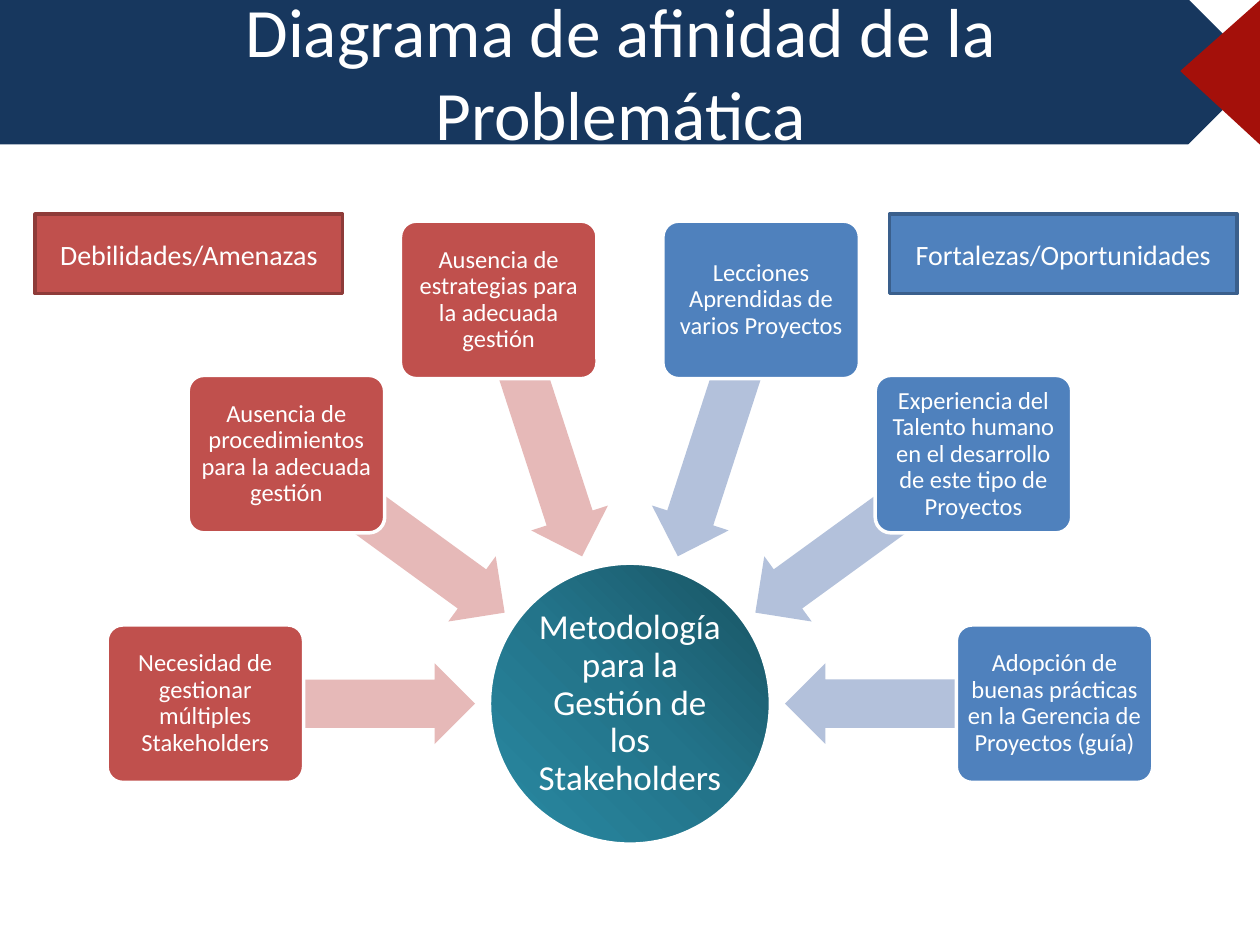
from copy import deepcopy
from math import cos, radians, sin

from pptx import Presentation
from pptx.dml.color import RGBColor
from pptx.enum.shapes import MSO_SHAPE
from pptx.enum.text import MSO_ANCHOR, PP_ALIGN
from pptx.oxml.ns import qn
from pptx.util import Inches, Pt

TOP, MIDDLE = MSO_ANCHOR.TOP, MSO_ANCHOR.MIDDLE
CENTER = PP_ALIGN.CENTER
RECTANGLE, ROUNDED = MSO_SHAPE.RECTANGLE, MSO_SHAPE.ROUNDED_RECTANGLE
PENTAGON, TRIANGLE = MSO_SHAPE.PENTAGON, MSO_SHAPE.ISOSCELES_TRIANGLE
OVAL, LEFT_ARROW = MSO_SHAPE.OVAL, MSO_SHAPE.LEFT_ARROW

COLORS = {
    "white": "FFFFFF", "navy": "17375E", "crimson": "A4100A",
    "red": "C0504D", "red_edge": "8E3B39", "red_arrow": "E6B9B8",
    "blue": "4F81BD", "blue_edge": "3A5F8C", "blue_arrow": "B3C1DB",
    "teal_dark": "185261", "teal": "23748A", "teal_light": "298AA3",
}

HUB = (5, 5.585)
HUB_SIZE = 2.23
ARROW_RADIUS, CARD_RADIUS = 2.3, 3.37
FACTORS = [
    ("red", "Necesidad de gestionar múltiples Stakeholders"),
    ("red", "Ausencia de procedimientos para la adecuada gestión"),
    ("red", "Ausencia de estrategias para la adecuada gestión"),
    ("blue", "Lecciones Aprendidas de varios Proyectos"),
    ("blue", "Experiencia del Talento humano en el desarrollo de este tipo de Proyectos"),
    ("blue", "Adopción de buenas prácticas en la Gerencia de Proyectos (guía)"),
]


def color(name):
    return RGBColor.from_string(COLORS[name])


def write(shape, text, size=14, spacing=1.0, anchor=MIDDLE, inset=(0.1, 0.05)):
    frame = shape.text_frame
    frame.word_wrap = True
    frame.vertical_anchor = anchor
    frame.margin_left = frame.margin_right = Inches(inset[0])
    frame.margin_top = frame.margin_bottom = Inches(inset[1])
    para = frame.paragraphs[0]
    para.alignment = CENTER
    para.line_spacing = spacing
    span = para.add_run()
    span.text = text
    span.font.name = "Calibri"
    span.font.size = Pt(size)
    span.font.color.rgb = color("white")


def around_hub(radius, angle):
    return (HUB[0] + radius * cos(radians(angle)),
            HUB[1] + radius * sin(radians(angle)))


class Diagram:
    def __init__(self, page):
        self.page = page

    def shape(self, kind, left, top, width, height, fill, line=None, weight=2,
              rotation=0, adjustments=()):
        shape = self.page.shapes.add_shape(
            kind, Inches(left), Inches(top), Inches(width), Inches(height))
        shape.shadow.inherit = False
        shape.rotation = rotation
        for index, value in enumerate(adjustments):
            shape.adjustments[index] = value
        shape.fill.solid()
        shape.fill.fore_color.rgb = color(fill)
        if line:
            shape.line.color.rgb = color(line)
            shape.line.width = Pt(weight)
        else:
            shape.line.fill.background()
        return shape

    def centered(self, kind, center, width, height, fill, **style):
        return self.shape(kind, center[0] - width / 2, center[1] - height / 2,
                          width, height, fill, **style)

    def header(self, text):
        self.shape(PENTAGON, 0, 0, 10, 1.14, "navy", line="navy", weight=0.75)
        self.shape(TRIANGLE, 9.12, 0.26, 1.14, 0.63, "crimson", line="crimson",
                   weight=0.75, rotation=270, adjustments=[0.51])
        box = self.page.shapes.add_textbox(
            Inches(1.2), Inches(-0.14), Inches(7.45), Inches(1.26))
        write(box, text, size=39.6, anchor=TOP)

    def hub(self, text):
        circle = self.centered(OVAL, HUB, HUB_SIZE, HUB_SIZE, "teal", line="white")
        circle.fill.gradient()
        circle.fill.gradient_angle = 225
        stop_list = next(circle._element.iter(qn("a:gsLst")))
        stop_list.append(deepcopy(stop_list[-1]))
        names = ("teal_dark", "teal", "teal_light")
        for index, (stop, name) in enumerate(zip(circle.fill.gradient_stops, names)):
            stop.position = index / 2
            stop.color.rgb = color(name)
        write(circle, text, size=20, spacing=0.9, inset=(0.01, 0.01))

    def factor(self, angle, hue, text):
        self.centered(LEFT_ARROW, around_hub(ARROW_RADIUS, angle), 2.14, 0.64,
                      hue + "_arrow", rotation=angle, adjustments=[0.6, 0.5])
        card = self.centered(ROUNDED, around_hub(CARD_RADIUS, angle), 1.56, 1.25,
                             hue, line="white", adjustments=[0.1])
        write(card, text, spacing=0.9, inset=(0.03, 0.03))

    def label(self, left, width, hue, text):
        box = self.shape(RECTANGLE, left, 1.7, width, 0.63, hue, line=hue + "_edge")
        write(box, text, size=16)


def main():
    deck = Presentation()
    deck.slide_width, deck.slide_height = Inches(10), Inches(7.5)
    diagram = Diagram(deck.slides.add_slide(deck.slide_layouts[6]))
    diagram.header("Diagrama de afinidad de la Problemática")
    diagram.hub("Metodología para la Gestión de los Stakeholders")
    for index, (hue, text) in enumerate(FACTORS):
        diagram.factor(180 + 36 * index, hue, text)
    diagram.label(0.28, 2.44, "red", "Debilidades/Amenazas")
    diagram.label(7.06, 2.76, "blue", "Fortalezas/Oportunidades")
    deck.save("out.pptx")


if __name__ == "__main__":
    main()
